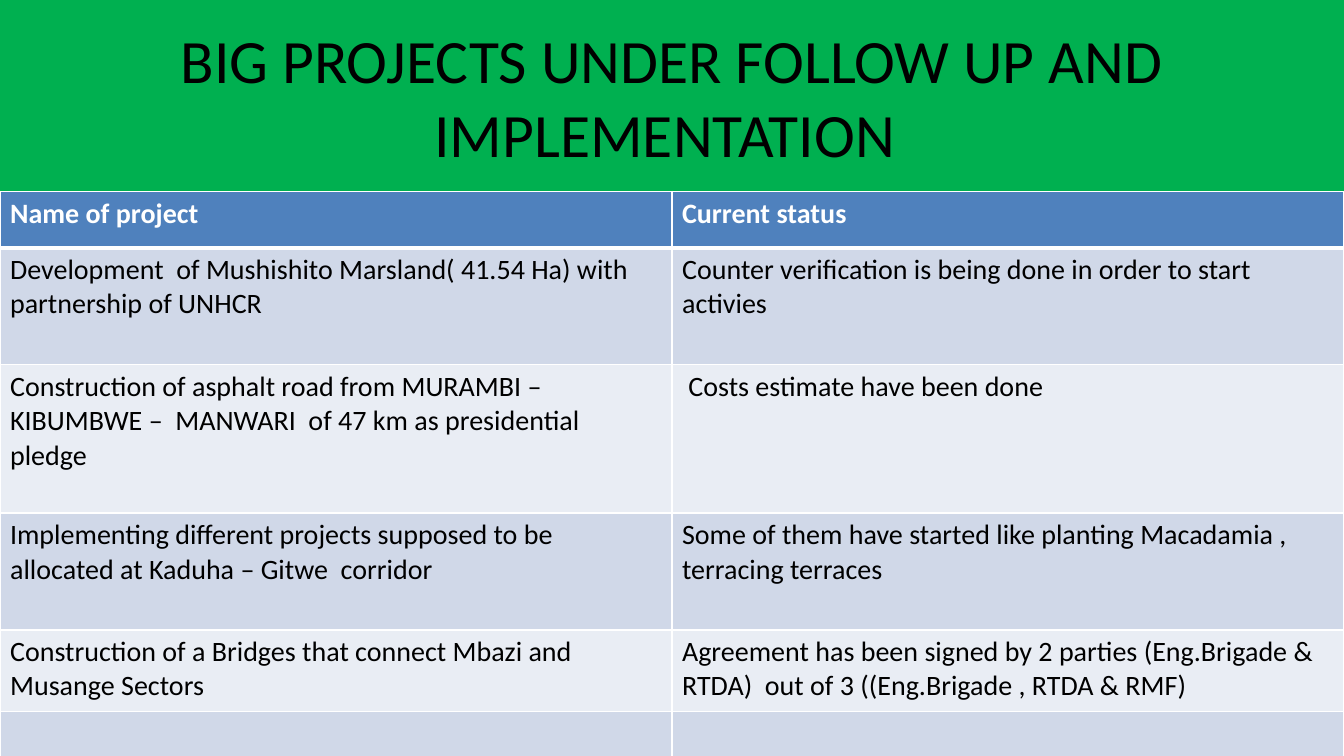
from dataclasses import dataclass

import pptx
import pptx.dml.color
import pptx.enum.text
import pptx.oxml
import pptx.oxml.ns
import pptx.util
from pptx.util import Inches

FONT = "Calibri"
WHITE, BLACK, GREEN = "FFFFFF", "000000", "00B050"
HEADER_BLUE, BAND_DARK, BAND_LIGHT = "4F81BD", "D0D8E8", "E9EDF4"
SLIDE_WIDTH, SLIDE_HEIGHT, TITLE_HEIGHT = 13.33, 7.5, 1.9


@dataclass(frozen=True)
class ProjectRow:
    height: float
    project: str = ""
    status: str = ""


ROWS = [
    ProjectRow(0.56, "Name of project", "Current status"),
    ProjectRow(1.16, "Development  of Mushishito Marsland( 41.54 Ha) with partnership of UNHCR",
               "Counter verification is being done in order to start activies"),
    ProjectRow(1.47, "Construction of asphalt road from MURAMBI – KIBUMBWE –  MANWARI  of 47 km "
               "as presidential pledge", " Costs estimate have been done"),
    ProjectRow(1.16, "Implementing different projects supposed to be allocated at Kaduha – Gitwe  corridor",
               "Some of them have started like planting Macadamia , terracing terraces"),
    ProjectRow(0.81, "Construction of a Bridges that connect Mbazi and Musange Sectors",
               "Agreement has been signed by 2 parties (Eng.Brigade & RTDA)  out of 3 "
               "((Eng.Brigade , RTDA & RMF)"),
    ProjectRow(0.46),
]


def set_fill(fill, color: str) -> None:
    fill.solid()
    fill.fore_color.rgb = pptx.dml.color.RGBColor.from_string(color)


def add_run(paragraph, text: str, size: float, color: str, bold: bool = False) -> None:
    run = paragraph.add_run()
    run.text = text
    run.font.name = FONT
    run.font.size = pptx.util.Pt(size)
    run.font.bold = bold
    set_fill(run.font.fill, color)


def add_borders(cell, top: float, bottom: float) -> None:
    """Give the cell white borders; must precede its fill in the XML."""
    properties = cell._tc.get_or_add_tcPr()
    for side, width in {"L": 1, "R": 1, "T": top, "B": bottom}.items():
        properties.append(pptx.oxml.parse_xml(
            f'<a:ln{side} {pptx.oxml.ns.nsdecls("a")} w="{pptx.util.Pt(width)}">'
            f'<a:solidFill><a:srgbClr val="{WHITE}"/></a:solidFill></a:ln{side}>'))


def add_title(slide) -> None:
    title = slide.shapes.title
    title.left, title.top = Inches(0), Inches(0)
    title.width, title.height = Inches(SLIDE_WIDTH), Inches(TITLE_HEIGHT)
    set_fill(title.fill, GREEN)
    title.text_frame.vertical_anchor = pptx.enum.text.MSO_ANCHOR.MIDDLE
    paragraph = title.text_frame.paragraphs[0]
    paragraph.alignment = pptx.enum.text.PP_ALIGN.CENTER
    add_run(paragraph, "BIG PROJECTS UNDER FOLLOW UP AND IMPLEMENTATION ", 44, BLACK)


def add_project_table(slide) -> None:
    table = slide.shapes.add_table(
        len(ROWS), 2, Inches(0), Inches(TITLE_HEIGHT), Inches(SLIDE_WIDTH),
        Inches(sum(row.height for row in ROWS))).table
    for index, row in enumerate(ROWS):
        table.rows[index].height = Inches(row.height)
        is_header = index == 0
        band = BAND_DARK if index % 2 else BAND_LIGHT
        for column, text in enumerate((row.project, row.status)):
            cell = table.cell(index, column)
            add_borders(cell, top=3 if index == 1 else 1, bottom=3 if is_header else 1)
            set_fill(cell.fill, HEADER_BLUE if is_header else band)
            if text:
                add_run(cell.text_frame.paragraphs[0], text, 20,
                        WHITE if is_header else BLACK, bold=is_header)


def main() -> None:
    presentation = pptx.Presentation()
    presentation.slide_width = Inches(SLIDE_WIDTH)
    presentation.slide_height = Inches(SLIDE_HEIGHT)
    slide = presentation.slides.add_slide(presentation.slide_layouts.get_by_name("Title Only"))
    add_title(slide)
    add_project_table(slide)
    presentation.save("out.pptx")


if __name__ == "__main__":
    main()
